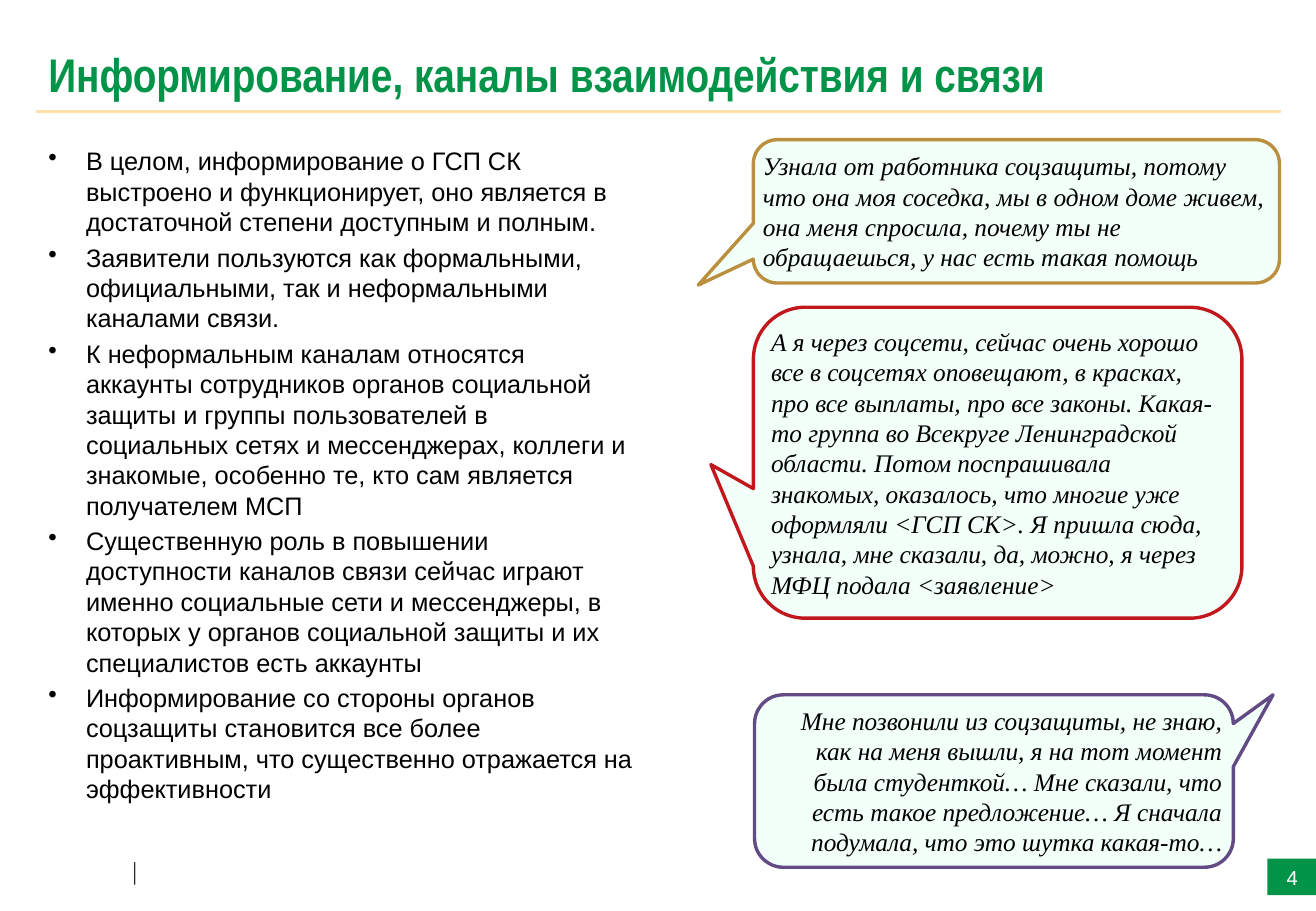
from dataclasses import dataclass

from lxml import etree
from pptx import Presentation
from pptx import util as u
from pptx.dml.color import RGBColor
from pptx.enum import shapes, text
from pptx.oxml import ns


@dataclass(frozen=True)
class Theme:
    """Colours, fonts and type sizes of the slide."""
    green: str = "019448"
    sand: str = "FDE0AA"
    mint: str = "F3FFF9"
    gold: str = "BA903E"
    red: str = "C1181D"
    plum: str = "624B85"
    black: str = "000000"
    grey: str = "262626"
    white: str = "FFFFFF"
    sans: str = "Arial"
    slim: str = "Arial Narrow"
    serif: str = "Times New Roman"
    head: float = 28
    body: float = 15
    page: float = 12
    mark: float = 11


class Deck:
    """Holds the theme and the current slide."""

    def __init__(self, look, wide, high):
        self.look = look
        self.prs = Presentation()
        self.prs.slide_width = u.Inches(wide)
        self.prs.slide_height = u.Inches(high)
        self.slide = self.prs.slides.add_slide(self.prs.slide_layouts[6])

    def style(self, frame, face, size, tint, bold=False, slant=False, align=None):
        """Format every run of a frame."""
        for para in frame.paragraphs:
            para.alignment = align
            for run in para.runs:
                font = run.font
                font.name, font.size = face, u.Pt(size)
                font.bold, font.italic = bold, slant
                font.color.rgb = RGBColor.from_string(tint)

    def label(self, box, words, face, size, tint, bold=False, wrap=True,
              anchor=text.MSO_ANCHOR.TOP):
        """Add a text box."""
        frame = self.slide.shapes.add_textbox(*map(u.Inches, box)).text_frame
        frame.word_wrap = wrap
        frame.vertical_anchor = anchor
        frame.text = words
        self.style(frame, face, size, tint, bold)
        return frame

    def points(self, box, items):
        """Add a bulleted list."""
        look = self.look
        frame = self.label(box, "\n".join(items), look.sans, look.body, look.black)
        for n, para in enumerate(frame.paragraphs):
            props = para._p.get_or_add_pPr()
            props.set("marL", str(u.Inches(0.31)))
            props.set("indent", str(u.Inches(-0.31)))
            para.space_before = u.Pt(3 if n else 0)
            etree.SubElement(props, ns.qn("a:buChar")).set("char", "•")

    def shape(self, kind, box, words, fill):
        """Add a filled shape with text and no outline."""
        form = self.slide.shapes.add_shape(kind, *map(u.Inches, box))
        form.shadow.inherit = False
        form.fill.solid()
        form.fill.fore_color.rgb = RGBColor.from_string(fill)
        form.line.fill.background()
        frame = form.text_frame
        frame.word_wrap = True
        frame.vertical_anchor = text.MSO_ANCHOR.MIDDLE
        frame.text = words
        return form

    def badge(self, box, words):
        """Add the page number block."""
        look = self.look
        form = self.shape(shapes.MSO_SHAPE.RECTANGLE, box, words, look.green)
        self.style(form.text_frame, look.sans, look.page, look.white,
                   align=text.PP_ALIGN.CENTER)

    def quote(self, box, tip, tint, words, align=text.PP_ALIGN.LEFT):
        """Add a speech bubble."""
        look = self.look
        form = self.shape(shapes.MSO_SHAPE.ROUNDED_RECTANGULAR_CALLOUT,
                          box, words, look.mint)
        for n, value in enumerate((*tip, 0.167)):
            form.adjustments[n] = value
        form.line.color.rgb = RGBColor.from_string(tint)
        form.line.width = u.Pt(2)
        frame = form.text_frame
        frame.margin_left = frame.margin_right = u.Inches(0.02)
        frame.margin_top = frame.margin_bottom = u.Inches(0.01)
        self.style(frame, look.serif, look.body, look.black, slant=True, align=align)

    def rule(self, left, top, right, tint):
        """Add a horizontal line."""
        line = self.slide.shapes.add_connector(
            shapes.MSO_CONNECTOR.STRAIGHT, *map(u.Inches, (left, top, right, top)))
        line.line.color.rgb = RGBColor.from_string(tint)
        line.line.width = u.Pt(1.5)
        etree.SubElement(line._element.spPr, ns.qn("a:effectLst"))


POINTS = (
    "В целом, информирование о ГСП СК выстроено и функционирует, оно является "
    "в достаточной степени доступным и полным.",
    "Заявители пользуются как формальными, официальными, так и неформальными "
    "каналами связи.",
    "К неформальным каналам относятся аккаунты сотрудников органов социальной "
    "защиты и группы пользователей в социальных сетях и мессенджерах, коллеги и "
    "знакомые, особенно те, кто сам является получателем МСП",
    "Существенную роль в повышении доступности каналов связи сейчас играют именно "
    "социальные сети и мессенджеры, в которых у органов социальной защиты и их "
    "специалистов есть аккаунты",
    "Информирование со стороны органов соцзащиты становится все более "
    "проактивным, что существенно отражается на эффективности",
)
FRIEND = (
    "Узнала от работника соцзащиты, потому что она моя соседка, мы в одном доме "
    "живем, она меня спросила, почему ты не обращаешься, у нас есть такая помощь"
)
SOCIAL = (
    "А я через соцсети, сейчас очень хорошо все в соцсетях оповещают, в красках, "
    "про все выплаты, про все законы. Какая-то группа во Всекруге Ленинградской "
    "области. Потом поспрашивала знакомых, оказалось, что многие уже оформляли "
    "<ГСП СК>. Я пришла сюда, узнала, мне сказали, да, можно, я через МФЦ подала "
    "<заявление>"
)
PHONE = (
    "Мне позвонили из соцзащиты, не знаю, как на меня вышли, я на тот момент была "
    "студенткой… Мне сказали, что есть такое предложение… Я сначала подумала, что "
    "это шутка какая-то…"
)


def main():
    look = Theme()
    deck = Deck(look, 10.83, 7.5)
    deck.label((0.97, 7.04, 0.3, 0.29), "│", look.slim, look.mark, look.grey,
               wrap=False)
    deck.rule(0.3, 0.92, 10.54, look.sand)
    deck.label((0.3, 0.3, 10.24, 0.61),
               "Информирование, каналы взаимодействия и связи", look.slim,
               look.head, look.green, bold=True, anchor=text.MSO_ANCHOR.MIDDLE)
    deck.badge((10.43, 7.07, 0.41, 0.3), "4")
    deck.points((0.3, 1.15, 5.04, 5.75), POINTS)
    deck.quote((6.2, 1.15, 4.33, 1.18), (-0.605, 0.515), look.gold, FRIEND)
    deck.quote((6.2, 2.53, 4.02, 2.56), (-0.587, 0.006), look.red, SOCIAL)
    deck.quote((6.21, 5.72, 3.94, 1.42), (0.583, -0.5), look.plum, PHONE,
               text.PP_ALIGN.RIGHT)
    deck.prs.save("out.pptx")


if __name__ == "__main__":
    main()
